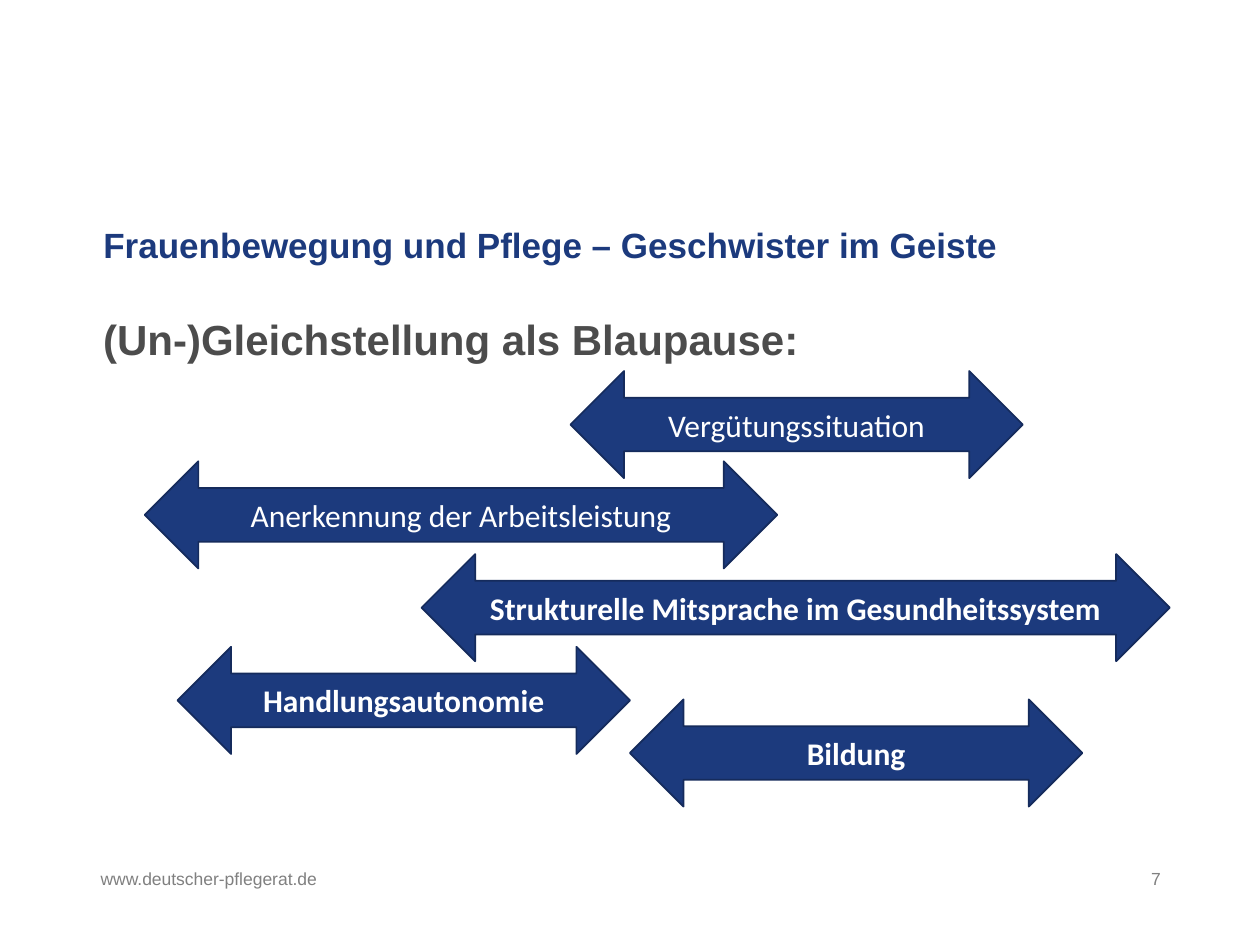
from pptx import Presentation
from pptx.dml.color import RGBColor
from pptx.enum.shapes import MSO_SHAPE
from pptx.enum.text import MSO_ANCHOR, PP_ALIGN
from pptx.oxml.ns import qn
from pptx.util import Cm, Pt

TITLE = "Frauenbewegung und Pflege – Geschwister im Geiste"
LEAD = "(Un-)Gleichstellung als Blaupause:"
# text, left, top, width (cm), bold
ARROWS = [
    ("Vergütungssituation", 11.5, 7.48, 9.12, False),
    ("Anerkennung der Arbeitsleistung", 2.92, 9.3, 12.75, False),
    ("Strukturelle Mitsprache im Gesundheitssystem", 8.5, 11.17, 15.08, True),
    ("Handlungsautonomie", 3.58, 13.04, 9.12, True),
    ("Bildung", 12.7, 14.1, 9.12, True),
]
# text, left, width (cm), alignment
FOOTER = [
    ("www.deutscher-pflegerat.de", 2.03, 13.82, PP_ALIGN.LEFT),
    ("7", 17.68, 5.72, PP_ALIGN.RIGHT),
]
ARROW_H = 2.16
FOOT_TOP, FOOT_H = 17.5, 1.02

THEME = {
    "blue": RGBColor(0x1C, 0x3A, 0x7D),
    "edge": RGBColor(0x15, 0x2B, 0x5C),
    "dark": RGBColor(0x4C, 0x4C, 0x4C),
    "gray": RGBColor(0x80, 0x80, 0x80),
    "white": RGBColor(0xFF, 0xFF, 0xFF),
    "head": "Arial", "label": "Calibri",
    "title": 20, "lead": 24, "arrow": 18, "foot": 10,
}


def place(shape, left, top, width, height):
    shape.left, shape.top = Cm(left), Cm(top)
    shape.width, shape.height = Cm(width), Cm(height)


def write(shape, text, size, color, face="head", bold=False,
          align=PP_ALIGN.LEFT, anchor=MSO_ANCHOR.TOP, inset=True):
    """Fill a shape with one styled paragraph and return the paragraph."""
    frame = shape.text_frame
    frame.word_wrap = True
    frame.vertical_anchor = anchor
    if not inset:
        frame.margin_left = frame.margin_right = 0
        frame.margin_top = frame.margin_bottom = 0
    frame.text = text
    para = frame.paragraphs[0]
    para.alignment = align
    para.space_before = Pt(0)
    font = para.font
    font.name, font.size, font.bold = THEME[face], Pt(THEME[size]), bold
    font.color.rgb = THEME[color]
    return para


def plain(para):
    """Take the bullet and the hanging indent off a paragraph."""
    props = para._p.get_or_add_pPr()
    props.set("marL", "0")
    props.set("indent", "0")
    props.insert_element_before(
        props.makeelement(qn("a:buNone"), {}), "a:tabLst", "a:defRPr")


def main():
    deck = Presentation()
    deck.slide_width, deck.slide_height = Cm(25.4), Cm(19.05)
    slide = deck.slides.add_slide(deck.slide_layouts[1])
    shapes = slide.shapes

    title, body = shapes.title, slide.placeholders[1]
    place(title, 1.83, 4.09, 21.46, 1.63)
    write(title, TITLE, "title", "blue", bold=True).line_spacing = Pt(32)

    place(body, 2.08, 6.22, 21.41, 9.5)
    lead = write(body, LEAD, "lead", "dark", bold=True, inset=False)
    lead.space_after = Pt(12)
    lead.line_spacing = 1.1
    plain(lead)

    for text, left, top, width, bold in ARROWS:
        arrow = shapes.add_shape(MSO_SHAPE.LEFT_RIGHT_ARROW, Cm(left), Cm(top),
                                 Cm(width), Cm(ARROW_H))
        arrow.shadow.inherit = False
        arrow.fill.solid()
        arrow.fill.fore_color.rgb = THEME["blue"]
        arrow.line.color.rgb = THEME["edge"]
        arrow.line.width = Pt(1)
        write(arrow, text, "arrow", "white", "label", bold,
              PP_ALIGN.CENTER, MSO_ANCHOR.MIDDLE)

    for text, left, width, align in FOOTER:
        box = shapes.add_textbox(Cm(left), Cm(FOOT_TOP), Cm(width), Cm(FOOT_H))
        write(box, text, "foot", "gray", align=align, inset=False)

    deck.save("out.pptx")


if __name__ == "__main__":
    main()
